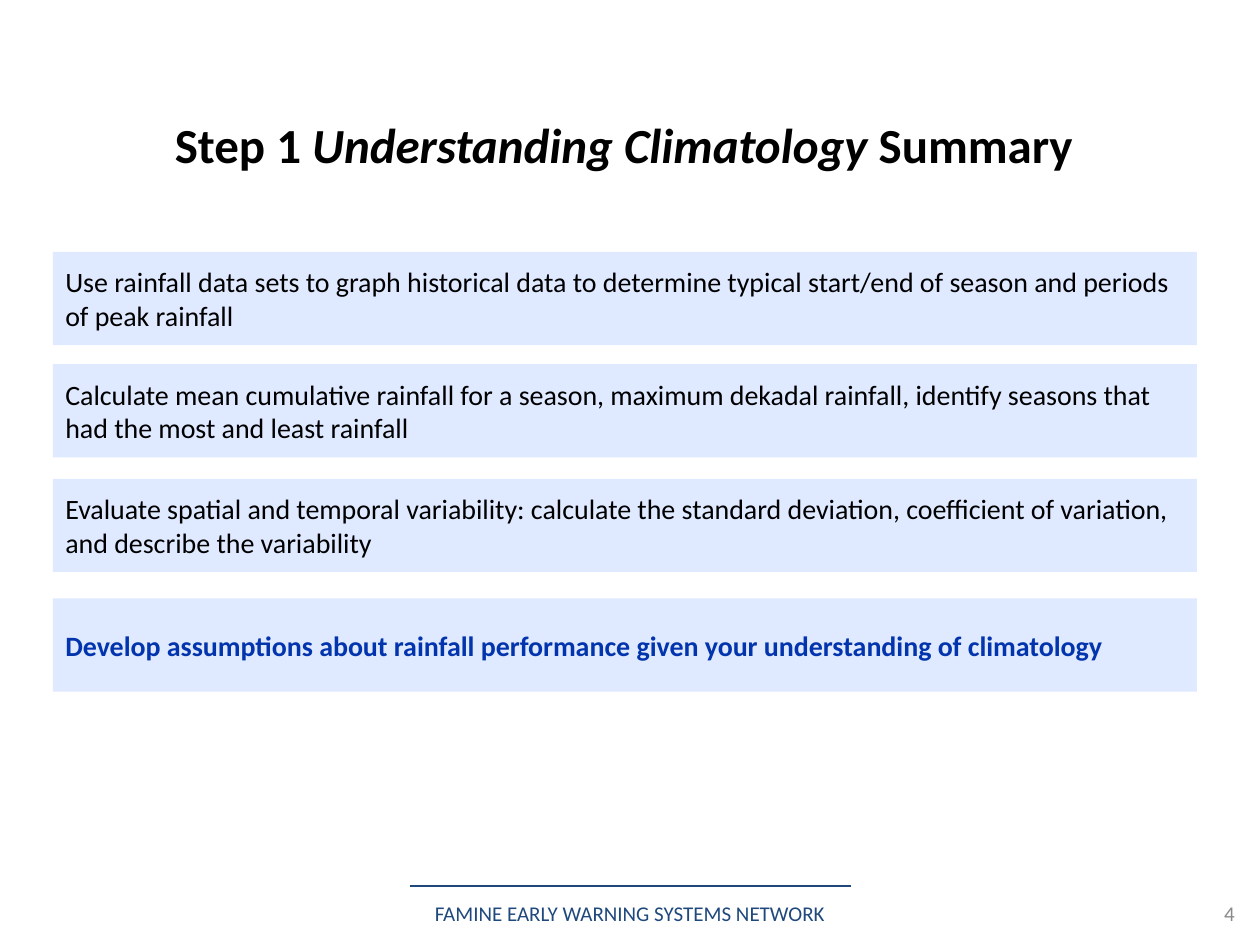
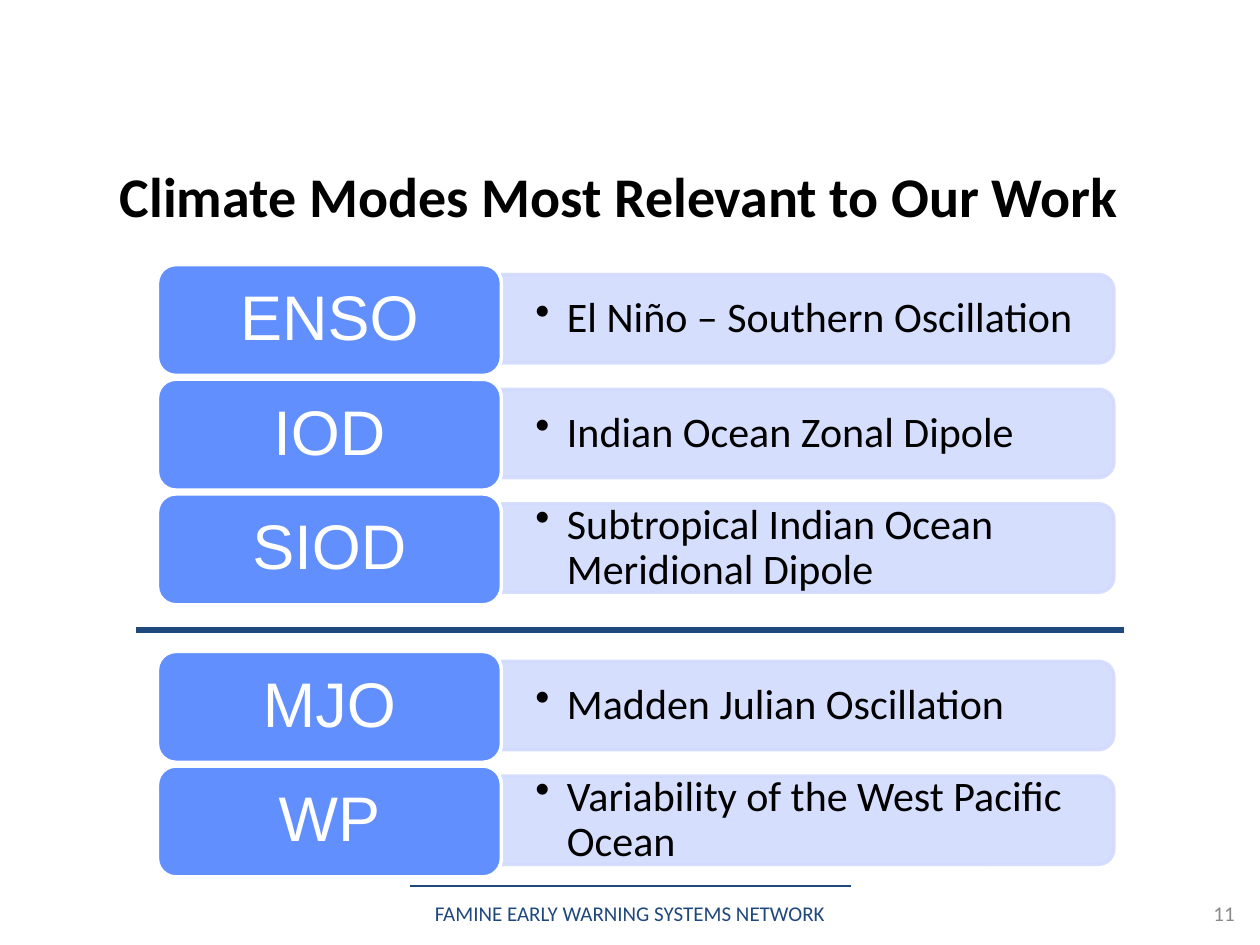
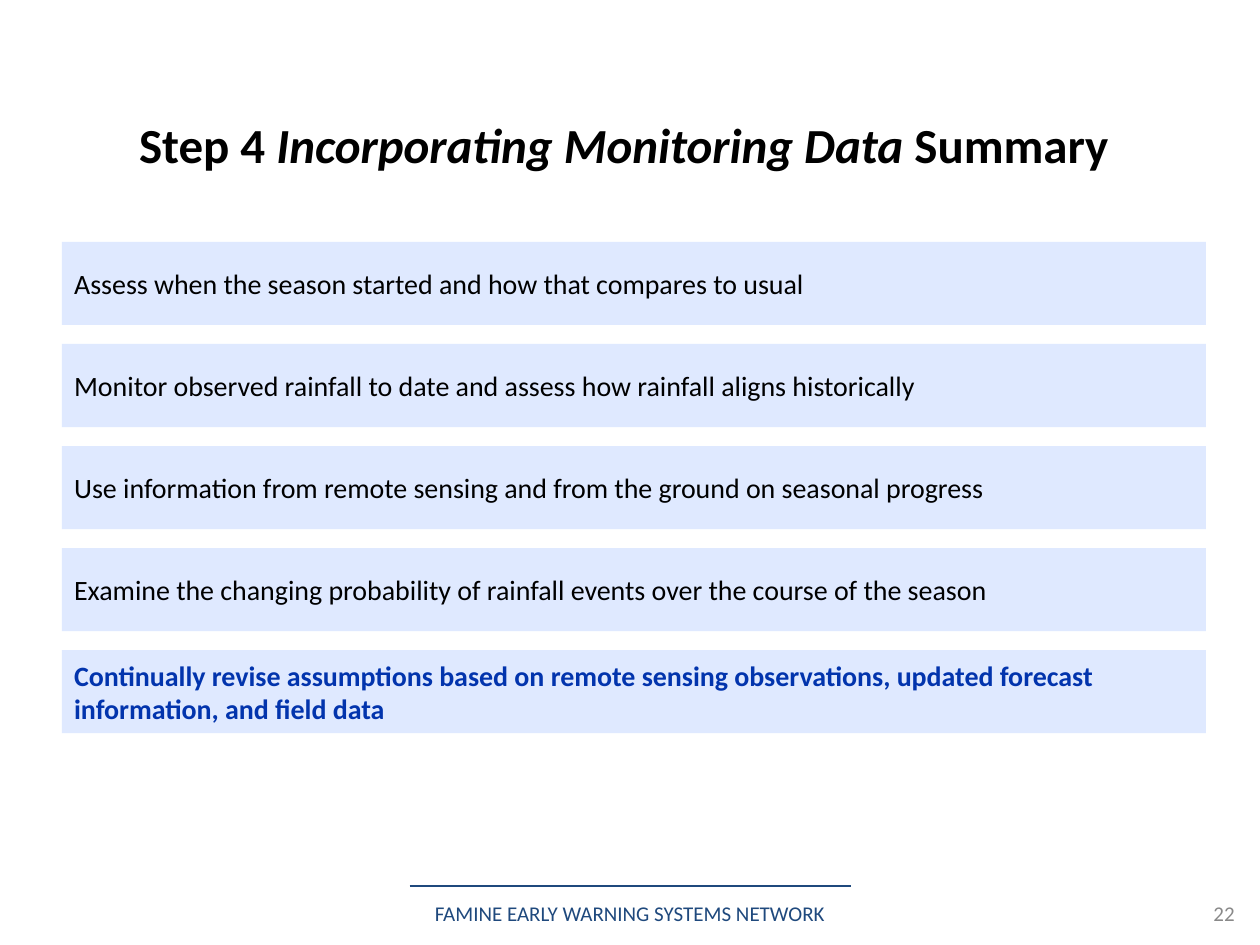
"""Build three slides on rainfall climatology, climate modes and monitoring."""
from dataclasses import dataclass
from math import cos, pi, sin

from lxml import etree
from pptx import Presentation
from pptx.dml.color import RGBColor
from pptx.enum.shapes import MSO_CONNECTOR, MSO_SHAPE
from pptx.enum.text import MSO_ANCHOR, MSO_AUTO_SIZE, PP_ALIGN
from pptx.oxml.ns import qn
from pptx.util import Inches, Pt

STRAIGHT = MSO_CONNECTOR.STRAIGHT
RECTANGLE = MSO_SHAPE.RECTANGLE
ROUNDED = MSO_SHAPE.ROUNDED_RECTANGLE
MIDDLE = MSO_ANCHOR.MIDDLE
NO_AUTOFIT = MSO_AUTO_SIZE.NONE
LEFT, CENTER, RIGHT = PP_ALIGN.LEFT, PP_ALIGN.CENTER, PP_ALIGN.RIGHT
TITLE_ONLY = 5


@dataclass(frozen=True)
class Theme:
    font: str = "Calibri"
    badge_font: str = "Arial"
    black: RGBColor = RGBColor(0x00, 0x00, 0x00)
    white: RGBColor = RGBColor(0xFF, 0xFF, 0xFF)
    navy: RGBColor = RGBColor(0x1F, 0x49, 0x7D)
    gray: RGBColor = RGBColor(0x89, 0x89, 0x89)
    emphasis: RGBColor = RGBColor(0x02, 0x34, 0xAD)
    band: RGBColor = RGBColor(0xDF, 0xE9, 0xFF)
    badge: RGBColor = RGBColor(0x61, 0x8F, 0xFD)
    panel: RGBColor = RGBColor(0xD2, 0xDB, 0xFE)
    panel_alpha: int = 90000
    summary_title_size: int = 28
    modes_title_size: int = 32
    band_size: int = 16
    badge_size: int = 36
    panel_size: int = 24
    footer_size: int = 12


class Deck:
    def __init__(self, theme):
        self.theme = theme
        self.presentation = Presentation()
        self.presentation.slide_width = Inches(10)
        self.presentation.slide_height = Inches(7.5)
        self.slide = None

    def start_slide(self, number):
        theme = self.theme
        layout = self.presentation.slide_layouts[TITLE_ONLY]
        self.slide = self.presentation.slides.add_slide(layout)
        self.rule(3.25, 6.75, 7.03, 1.25)
        self.label("FAMINE EARLY WARNING SYSTEMS NETWORK", 3, 4, CENTER, theme.navy)
        self.label(str(number), 7.8, 2, RIGHT, theme.gray)

    def style(self, paragraph, size, color, align=LEFT, bold=False, font=None):
        paragraph.alignment = align
        paragraph.font.name = font or self.theme.font
        paragraph.font.size = Pt(size)
        paragraph.font.bold = bold
        paragraph.font.color.rgb = color

    def frame(self, shape, insets=(0.1, 0.05, 0.1, 0.05)):
        frame = shape.text_frame
        frame.word_wrap = True
        frame.auto_size = NO_AUTOFIT
        frame.vertical_anchor = MIDDLE
        (frame.margin_left, frame.margin_top,
         frame.margin_right, frame.margin_bottom) = map(Inches, insets)
        return frame

    def paint(self, shape, fill, line=None):
        shape.shadow.inherit = False
        shape.fill.solid()
        shape.fill.fore_color.rgb = fill
        if line is None:
            shape.line.fill.background()
        else:
            shape.line.color.rgb = line
            shape.line.width = Pt(2)

    def title(self, parts, left, top, width, size):
        heading = self.slide.shapes.title
        heading.left, heading.top = Inches(left), Inches(top)
        heading.width, heading.height = Inches(width), Inches(0.53)
        paragraph = self.frame(heading).paragraphs[0]
        for words, italic in parts:
            run = paragraph.add_run()
            run.text = words
            if italic:
                run.font.italic = True
        self.style(paragraph, size, self.theme.black, CENTER, bold=True)

    def rule(self, start, end, top, weight):
        rule = self.slide.shapes.add_connector(
            STRAIGHT, Inches(start), Inches(top), Inches(end), Inches(top))
        rule.line.color.rgb = self.theme.navy
        rule.line.width = Pt(weight)
        etree.SubElement(rule._element.spPr, qn("a:effectLst"))

    def label(self, words, left, width, align, color):
        label = self.slide.shapes.add_textbox(
            Inches(left), Inches(7.1), Inches(width), Inches(0.3))
        paragraph = self.frame(label, (0, 0, 0, 0)).paragraphs[0]
        paragraph.text = words
        self.style(paragraph, self.theme.footer_size, color, align)

    def band(self, words, left, top, height, emphasized):
        theme = self.theme
        band = self.slide.shapes.add_shape(
            RECTANGLE, Inches(left), Inches(top), Inches(9.08), Inches(height))
        self.paint(band, theme.band)
        paragraph = self.frame(band).paragraphs[0]
        paragraph.text = words
        color = theme.emphasis if emphasized else theme.black
        self.style(paragraph, theme.band_size, color, bold=emphasized)

    def badge(self, acronym, left, top, width, height):
        theme = self.theme
        badge = self.slide.shapes.add_shape(
            ROUNDED, Inches(left), Inches(top), Inches(width), Inches(height))
        self.paint(badge, theme.badge, theme.white)
        paragraph = self.frame(badge, (0.19, 0.12, 0.19, 0.12)).paragraphs[0]
        paragraph.text = acronym
        paragraph.line_spacing = 0.9
        self.style(paragraph, theme.badge_size, theme.white, CENTER,
                   font=theme.badge_font)

    def panel(self, words, left, top, width, height):
        theme = self.theme
        radius, steps = 0.12, 8
        right, bottom = left + width, top + height
        angles = [pi / 2 * step / steps for step in range(steps + 1)]
        upper = [(right - radius + radius * sin(a), top + radius - radius * cos(a))
                 for a in angles]
        lower = [(x, top + bottom - y) for x, y in reversed(upper)]
        outline = self.slide.shapes.build_freeform(Inches(left), Inches(top))
        outline.add_line_segments(
            [(Inches(x), Inches(y)) for x, y in upper + lower + [(left, bottom)]])
        panel = outline.convert_to_shape()
        self.paint(panel, theme.panel, theme.panel)
        for color in panel._element.spPr.iter(qn("a:srgbClr")):
            etree.SubElement(color, qn("a:alpha"), val=str(theme.panel_alpha))
        paragraph = self.frame(panel, (0.27, 0.17, 0.31, 0.17)).paragraphs[0]
        paragraph.text = words
        paragraph.line_spacing = 0.9
        properties = paragraph._p.get_or_add_pPr()
        properties.set("marL", str(Inches(0.25)))
        properties.set("indent", str(Inches(-0.25)))
        etree.SubElement(properties, qn("a:buChar"), char="•")
        self.style(paragraph, theme.panel_size, theme.black)

    def summary(self, number, step, topic, points, left, tops, height):
        self.start_slide(number)
        parts = [(f"{step} ", False), (f"{topic} ", True), ("Summary", False)]
        self.title(parts, 0.45, 0.88, 9, self.theme.summary_title_size)
        for point, top in zip(points, tops):
            self.band(point, left, top, height, emphasized=point == points[-1])

    def climate_modes(self, number, heading, groups):
        self.start_slide(number)
        self.title([(heading, False)], 0.25, 1.28, 9.33, self.theme.modes_title_size)
        for group_top, modes in groups:
            for row, (acronym, meaning) in enumerate(modes):
                top = group_top + 0.91 * row
                self.panel(meaning, 3.98, top + 0.08, 4.86, 0.7)
                self.badge(acronym, 1.25, top, 2.73, 0.88)
        self.rule(1.08, 8.92, 5, 3)


CLIMATOLOGY_POINTS = [
    "Use rainfall data sets to graph historical data to determine typical "
    "start/end of season and periods of peak rainfall",
    "Calculate mean cumulative rainfall for a season, maximum dekadal rainfall, "
    "identify seasons that had the most and least rainfall",
    "Evaluate spatial and temporal variability: calculate the standard deviation, "
    "coefficient of variation, and describe the variability",
    "Develop assumptions about rainfall performance given your understanding "
    "of climatology",
]
MODE_GROUPS = [
    (2.1, [("ENSO", "El Niño – Southern Oscillation"),
           ("IOD", "Indian Ocean Zonal Dipole"),
           ("SIOD", "Subtropical Indian Ocean Meridional Dipole")]),
    (5.17, [("MJO", "Madden Julian Oscillation"),
            ("WP", "Variability of the West Pacific Ocean")]),
]
MONITORING_POINTS = [
    "Assess when the season started and how that compares to usual",
    "Monitor observed rainfall to date and assess how rainfall aligns historically",
    "Use information from remote sensing and from the ground on seasonal progress",
    "Examine the changing probability of rainfall events over the course of the season",
    "Continually revise assumptions based on remote sensing observations, "
    "updated forecast information, and field data",
]


def main():
    deck = Deck(Theme())
    deck.summary(4, "Step 1", "Understanding Climatology", CLIMATOLOGY_POINTS,
                 0.42, [2, 2.89, 3.8, 4.75], 0.74)
    deck.climate_modes(11, "Climate Modes Most Relevant to Our Work", MODE_GROUPS)
    monitoring_tops = [1.92 + 0.81 * row for row in range(len(MONITORING_POINTS))]
    deck.summary(22, "Step 4", "Incorporating Monitoring Data", MONITORING_POINTS,
                 0.49, monitoring_tops, 0.66)
    deck.presentation.save("out.pptx")


if __name__ == "__main__":
    main()
